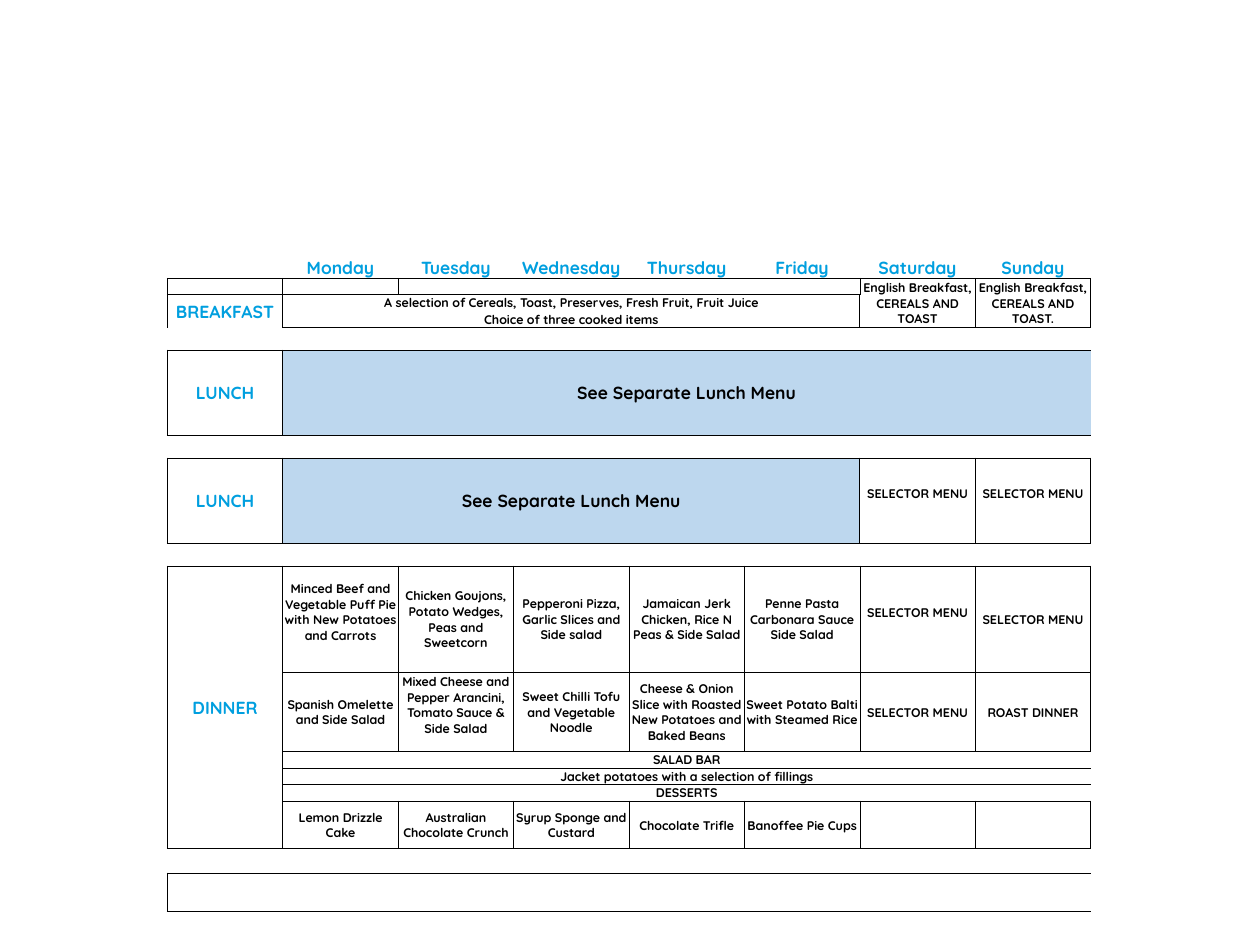
from pptx import Presentation
from pptx.dml.color import RGBColor
from pptx.enum.text import MSO_ANCHOR, PP_ALIGN
from pptx.oxml.ns import qn
from pptx.util import Inches, Pt
from lxml import etree

CENTER = PP_ALIGN.CENTER
MIDDLE, BOTTOM = MSO_ANCHOR.MIDDLE, MSO_ANCHOR.BOTTOM
BLUE = RGBColor(0x00, 0x9F, 0xDF)
BLACK = RGBColor(0x00, 0x00, 0x00)
PALE_BLUE = RGBColor(0xBD, 0xD7, 0xEE)
FONT = "Quicksand"
PLAIN_TABLE_STYLE = "{2D5ABB26-0587-4C30-8999-92F81FD0307C}"

COLUMNS = 8
TABLE_WIDTH = 10.26
ROW_HEIGHTS = [0.25, 0.18, 0.18, 0.18, 0.25, 0.95, 0.25, 0.95, 0.25,
               1.18, 0.88, 0.18, 0.18, 0.18, 0.53, 0.27, 0.43]
(HEADER, BREAKFAST, LUNCH, WEEKDAY_LUNCH, DINNER, SECOND_DINNER,
 SALAD, DESSERT, FOOTER) = 0, 1, 5, 7, 9, 10, 11, 14, 16
SATURDAY, SUNDAY = 6, 7
RAISED = 0.16  # bottom margin that lifts a dish above the middle of its cell

DAYS = ["Monday", "Tuesday", "Wednesday", "Thursday", "Friday", "Saturday", "Sunday"]
BREAKFAST_LINES = [
    "A selection of Cereals, Toast, Preserves, Fresh Fruit, Fruit Juice",
    "Choice of three cooked items",
]
WEEKEND_BREAKFASTS = [
    "English Breakfast, CEREALS AND TOAST",
    "English Breakfast, CEREALS AND TOAST.",
]
LUNCH_NOTE = "See Separate Lunch Menu"
SELECTOR = "SELECTOR MENU"
DISHES = {
    DINNER: [
        "Minced Beef and Vegetable Puff Pie with New Potatoes and Carrots",
        "Chicken Goujons, Potato Wedges, Peas and Sweetcorn",
        "Pepperoni Pizza,\nGarlic Slices and Side salad",
        "Jamaican Jerk Chicken, Rice N Peas & Side Salad",
        "Penne Pasta Carbonara Sauce Side Salad",
        SELECTOR,
        SELECTOR,
    ],
    SECOND_DINNER: [
        "Spanish Omelette and Side Salad",
        "Mixed Cheese and Pepper Arancini, Tomato Sauce & Side Salad",
        "Sweet Chilli Tofu and Vegetable Noodle",
        "Cheese & Onion Slice with Roasted New Potatoes and Baked Beans",
        "Sweet Potato Balti with Steamed Rice",
        SELECTOR,
        "ROAST DINNER",
    ],
    DESSERT: [
        "Lemon Drizzle Cake",
        "Australian Chocolate Crunch",
        "Syrup Sponge and Custard",
        "Chocolate Trifle",
        "Banoffee Pie Cups",
        "",
        "",
    ],
}
RAISED_DISHES = {(DINNER, 1), (DINNER, SATURDAY), (SECOND_DINNER, 2)}
DINNER_BARS = ["SALAD BAR", "Jacket potatoes with a selection of fillings", "DESSERTS"]


class MenuSlide:
    """Holds the slide, its menu table and the text style."""

    def __init__(self, presentation):
        self.slide = presentation.slides.add_slide(presentation.slide_layouts[6])

    def add_menu_table(self, left, top):
        frame = self.slide.shapes.add_table(
            len(ROW_HEIGHTS), COLUMNS, Inches(left), Inches(top),
            Inches(TABLE_WIDTH), Inches(sum(ROW_HEIGHTS)))
        self.table = frame.table
        self.table.first_row = self.table.horz_banding = False
        self.table._tbl.tblPr.find(qn("a:tableStyleId")).text = PLAIN_TABLE_STYLE
        for column in self.table.columns:
            column.width = Inches(TABLE_WIDTH / COLUMNS)
        for row, height in zip(self.table.rows, ROW_HEIGHTS):
            row.height = Inches(height)
        for cell in self.table.iter_cells():
            cell.fill.background()
            cell.margin_left = cell.margin_right = cell.margin_top = Inches(0.01)
            cell.margin_bottom = 0
            # keeps empty cells from stretching their rows
            cell.text_frame.paragraphs[0]._p.get_or_add_endParaRPr().set("sz", "1000")

    def merge(self, row, column, rows=1, columns=1):
        cell = self.table.cell(row, column)
        if rows * columns > 1:
            cell.merge(self.table.cell(row + rows - 1, column + columns - 1))
        return cell

    def set_text(self, cell, text, size=10, color=BLACK, anchor=MIDDLE):
        cell.vertical_anchor = anchor
        cell.text_frame.text = text
        for paragraph in cell.text_frame.paragraphs:
            paragraph.alignment = CENTER
            for run in paragraph.runs:
                run.font.name = FONT
                run.font.size = Pt(size)
                run.font.bold = True
                run.font.color.rgb = color

    def outline(self, row, column, rows=1, columns=1):
        """Draw a border round a block of cells, thin between two days."""
        for r in range(row, row + rows):
            for c in range(column, column + columns):
                edges = [
                    ("a:lnB", r == row + rows - 1, 1),
                    ("a:lnT", r == row, 1),
                    ("a:lnR", c == column + columns - 1, self.side_width(c + 1)),
                    ("a:lnL", c == column, self.side_width(c)),
                ]
                properties = self.table.cell(r, c)._tc.get_or_add_tcPr()
                for tag, on_edge, width in edges:
                    if on_edge:
                        line = etree.Element(qn(tag), w=str(Pt(width)))
                        fill = etree.SubElement(line, qn("a:solidFill"))
                        etree.SubElement(fill, qn("a:srgbClr"), val=str(BLACK))
                        properties.insert(0, line)

    @staticmethod
    def side_width(boundary):
        return 0.5 if 2 <= boundary < COLUMNS else 1

    def add_block(self, row, column, text, rows=1, columns=1, size=10, color=BLACK,
                  fill=None, bottom=0):
        cell = self.merge(row, column, rows, columns)
        if text:
            self.set_text(cell, text, size, color)
        if fill is not None:
            cell.fill.solid()
            cell.fill.fore_color.rgb = fill
        cell.margin_bottom = Inches(bottom)
        self.outline(row, column, rows, columns)

    def add_meal_label(self, row, text, rows=1):
        self.add_block(row, 0, text, rows, size=14, color=BLUE)

    def add_breakfast(self):
        self.set_text(self.merge(BREAKFAST + 1, 0, rows=2), "BREAKFAST", 14, BLUE)
        self.outline(BREAKFAST, 0, rows=3)
        for row, text in enumerate(BREAKFAST_LINES, BREAKFAST + 1):
            self.set_text(self.merge(row, 1, columns=5), text)
        self.outline(BREAKFAST, 1, rows=3, columns=5)
        for column, text in enumerate(WEEKEND_BREAKFASTS, SATURDAY):
            self.add_block(BREAKFAST, column, text, rows=3)

    def add_lunches(self):
        for row, days in ((LUNCH, 7), (WEEKDAY_LUNCH, 5)):
            self.add_meal_label(row, "LUNCH")
            self.add_block(row, 1, LUNCH_NOTE, columns=days, size=14, fill=PALE_BLUE)
        for column in (SATURDAY, SUNDAY):
            self.add_block(WEEKDAY_LUNCH, column, SELECTOR, bottom=RAISED)

    def add_dinner(self):
        self.add_meal_label(DINNER, "DINNER", rows=6)
        for row, dishes in DISHES.items():
            for column, dish in enumerate(dishes, 1):
                bottom = RAISED if (row, column) in RAISED_DISHES else 0
                self.add_block(row, column, dish, bottom=bottom)
        for row, text in enumerate(DINNER_BARS, SALAD):
            self.add_block(row, 1, text, columns=7)


def main():
    presentation = Presentation()
    presentation.slide_width = Inches(14)
    presentation.slide_height = Inches(10.5)

    menu = MenuSlide(presentation)
    menu.add_menu_table(1.86, 2.84)
    for column, day in enumerate(DAYS, 1):
        menu.set_text(menu.table.cell(HEADER, column), day, 14, BLUE, BOTTOM)
    menu.add_breakfast()
    menu.add_lunches()
    menu.add_dinner()
    menu.add_block(FOOTER, 0, "", columns=COLUMNS)

    presentation.save("out.pptx")


if __name__ == "__main__":
    main()
